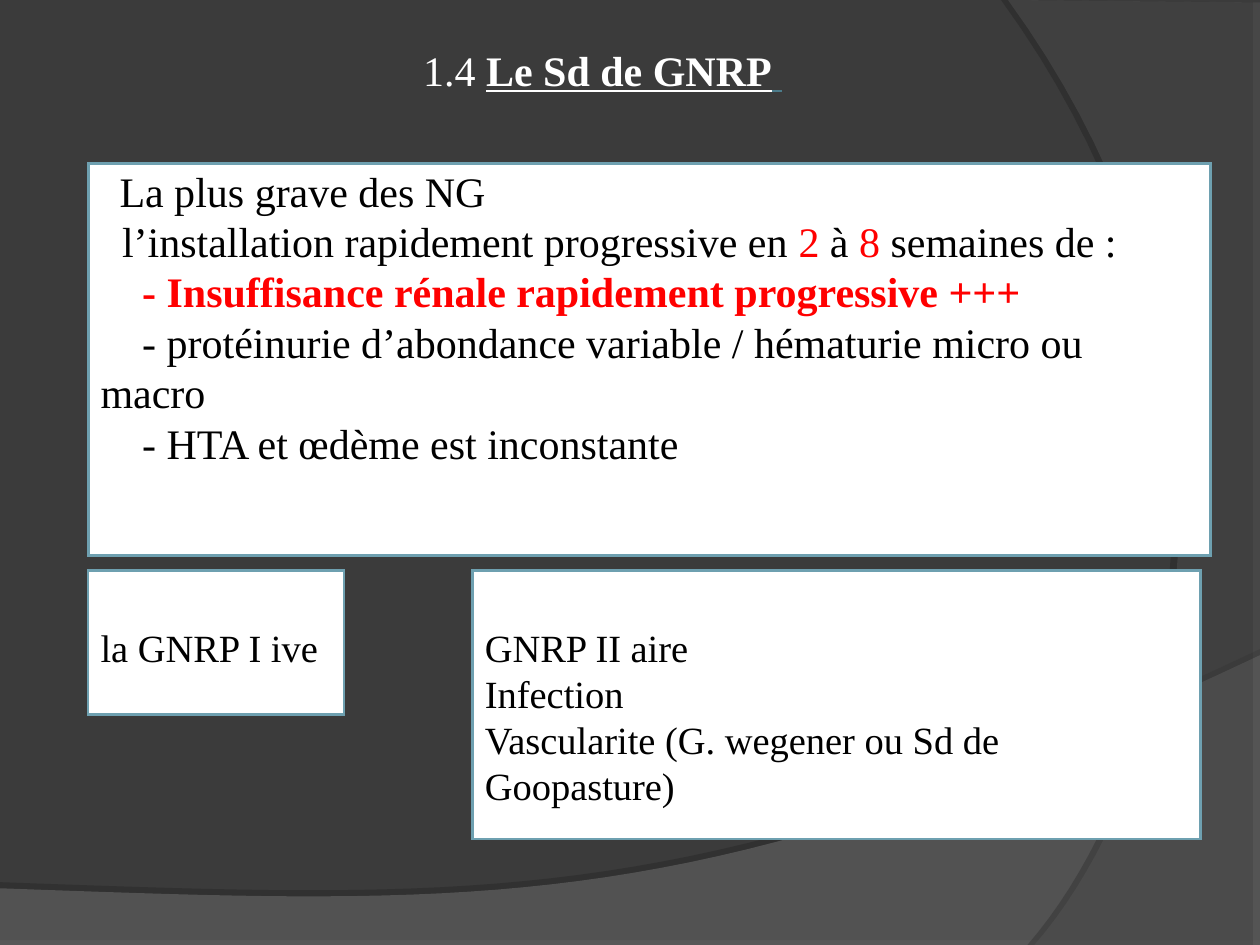
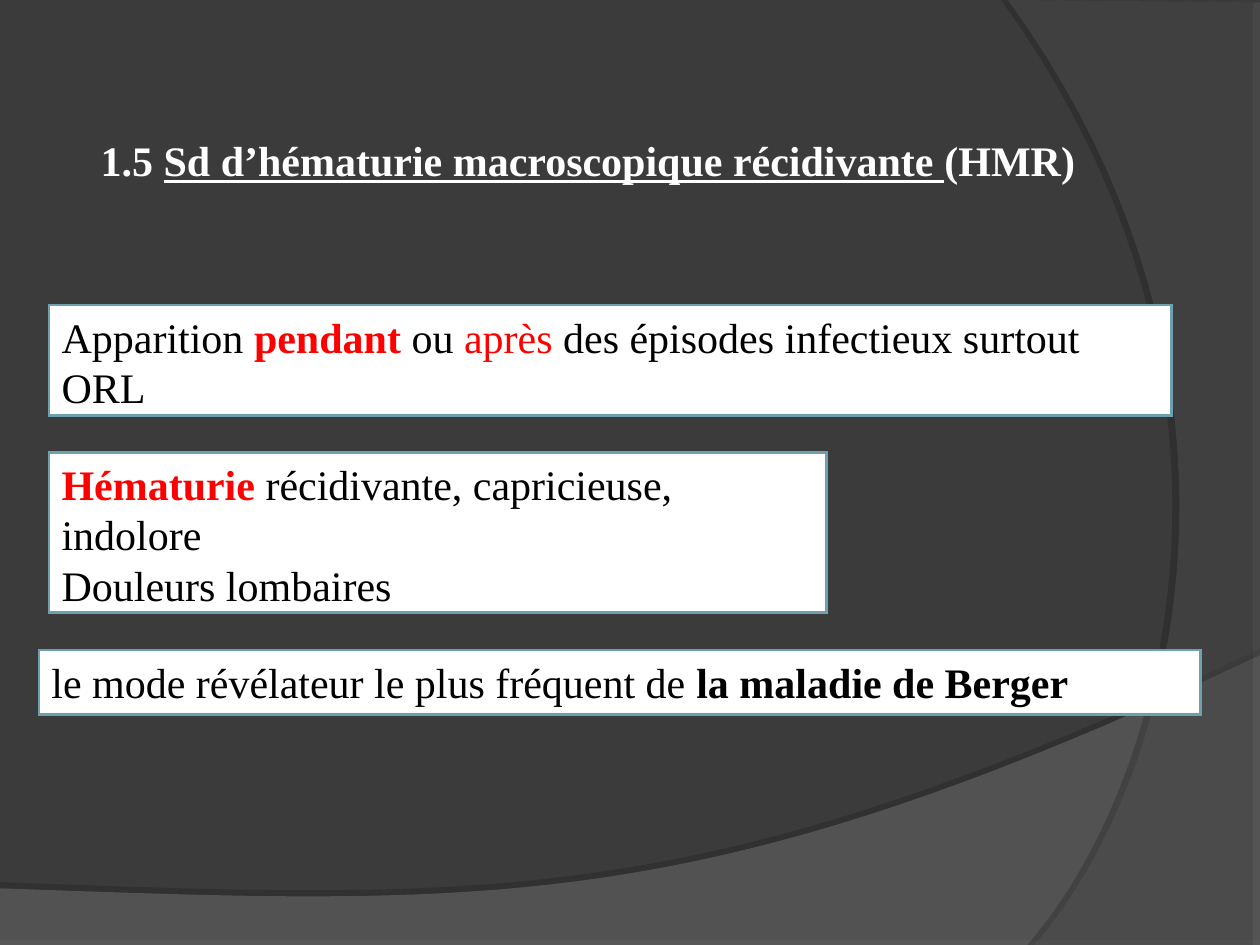
from lxml import etree
from pptx import Presentation
from pptx.dml.color import RGBColor
from pptx.enum import shapes, text
from pptx.oxml import ns
from pptx.util import Inches, Pt

WHITE = RGBColor(0xFF, 0xFF, 0xFF)
BLACK = RGBColor(0, 0, 0)
RED = RGBColor(0xFF, 0, 0)
TEAL = RGBColor(0x4C, 0x7C, 0x8B)
EDGE = RGBColor(0x6E, 0xA0, 0xB0)
DARK = RGBColor(0x3B, 0x3B, 0x3B)
GREY = RGBColor(0x7C, 0x7C, 0x7C)
SLATE = RGBColor(0x59, 0x59, 0x59)
FONT = "Times New Roman"
STEPS = 40


def child(node, tag, **attrs):
    return etree.SubElement(node, ns.qn(tag), {k: str(v) for k, v in attrs.items()})


def curve(a, b, c, d):
    points = []
    for i in range(STEPS + 1):
        t = i / STEPS
        s = 1 - t
        points.append(tuple(
            s**3 * p + 3 * s * s * t * q + 3 * s * t * t * r + t**3 * z
            for p, q, r, z in zip(a, b, c, d)))
    return points


def add_band(slide, points, color, alpha, shade, dist, angle):
    spots = [(Inches(x), Inches(y)) for x, y in points]
    pen = slide.shapes.build_freeform(*spots[0])
    pen.add_line_segments(spots[1:], close=True)
    band = pen.convert_to_shape()
    band.fill.solid()
    band.fill.fore_color.rgb = color
    band.line.fill.background()
    tint = band.element.spPr.find(".//" + ns.qn("a:srgbClr"))
    child(tint, "a:alpha", val=alpha * 1000)
    band.shadow.inherit = False
    effects = band.element.spPr.find(ns.qn("a:effectLst"))
    shadow = child(effects, "a:outerShdw", blurRad=0, dist=Pt(dist),
                   dir=angle * 60000, algn="ctr", rotWithShape=0)
    black = child(shadow, "a:srgbClr", val="000000")
    child(black, "a:alpha", val=shade * 1000)


def add_page(deck):
    slide = deck.slides.add_slide(deck.slide_layouts[6])
    low = curve((10, 5.2), (5.59, 7.29), (3.91, 7.19), (0, 7.05))
    side = curve((8.21, 7.5), (9.35, 6.19), (10.18, 3), (8, 0))
    add_band(slide, [(0, 7.51), (10, 7.51)] + low, GREY, 45, 35, 3.5, 270)
    add_band(slide, [(10, 0.02), (10, 7.5)] + side, SLATE, 40, 45, 4, 180)
    return slide


def write(shape, lines, size, color, top):
    frame = shape.text_frame
    frame.word_wrap = True
    frame.vertical_anchor = text.MSO_ANCHOR.TOP
    frame.margin_top = Inches(top)
    for i, (indent, runs) in enumerate(lines):
        para = frame.add_paragraph() if i else frame.paragraphs[0]
        para.alignment = text.PP_ALIGN.LEFT
        para._p.get_or_add_pPr().set("indent", str(Inches(indent)))
        for words, style in runs:
            run = para.add_run()
            run.text = words
            font = run.font
            font.name = FONT
            font.size = Pt(size)
            font.color.rgb = style.get("color", color)
            font.bold = style.get("bold", False)
            font.underline = style.get("line", False)


def add_title(slide, box, runs):
    title = slide.shapes.add_textbox(*map(Inches, box))
    write(title, [(0, runs)], 24, WHITE, 0.05)


def add_card(slide, box, lines, size=24, top=0.05):
    card = slide.shapes.add_shape(shapes.MSO_SHAPE.RECTANGLE, *map(Inches, box))
    card.shadow.inherit = False
    card.fill.solid()
    card.fill.fore_color.rgb = WHITE
    card.line.color.rgb = EDGE
    card.line.width = Pt(1.5)
    child(card.element.spPr.find(ns.qn("a:ln")), "a:miter", lim=800000)
    write(card, lines, size, BLACK, top)


def plain(words, indent=0):
    return indent, [(words, {})]


def add_rapid(deck):
    slide = add_page(deck)
    red = {"color": RED}
    add_card(slide, (0.7, 1.3, 8.91, 3.11), [
        plain("La plus grave des NG", 0.15),
        (0.17, [("l’installation rapidement progressive en ", {}), ("2", red),
                (" à ", {}), ("8", red), (" semaines de :", {})]),
        (0.33, [("- Insuffisance rénale rapidement progressive +++",
                 {"color": RED, "bold": True})]),
        plain("- protéinurie d’abondance variable / hématurie micro ou macro", 0.33),
        plain("- HTA et œdème est inconstante", 0.33),
    ], top=0.01)
    add_card(slide, (0.7, 4.53, 2.03, 1.14), [plain("la GNRP I ive")], 22, 0.42)
    add_card(slide, (3.75, 4.53, 5.78, 2.13), [
        plain("GNRP II aire"),
        plain("Infection"),
        plain("Vascularite (G. wegener ou Sd de Goopasture)"),
    ], 22, 0.42)
    add_title(slide, (3.26, 0.3, 3.17, 0.51), [
        ("1.4 ", {}),
        ("Le Sd de GNRP", {"bold": True, "line": True}),
        (" ", {"bold": True, "line": True, "color": TEAL}),
    ])


def add_relapse(deck):
    slide = add_page(deck)
    bold = {"bold": True}
    alert = {"bold": True, "color": RED}
    add_title(slide, (0.7, 1.02, 8.05, 0.88), [
        ("1.5 ", bold),
        ("Sd d’hématurie macroscopique récidivante ", {"bold": True, "line": True}),
        ("(HMR)", bold),
    ])
    add_card(slide, (0.39, 3.59, 6.17, 1.27), [
        (0, [("Hématurie", alert), (" récidivante, capricieuse, indolore", {})]),
        plain("Douleurs lombaires"),
    ])
    add_card(slide, (0.39, 2.42, 8.91, 0.88), [
        (0, [("Apparition ", {}), ("pendant", alert), (" ou ", {}),
             ("après", {"color": RED}),
             (" des épisodes infectieux surtout ORL", {})]),
    ])
    add_card(slide, (0.31, 5.16, 9.22, 0.51), [
        (0, [("le mode révélateur le plus fréquent de ", {}),
             ("la maladie de Berger", bold)]),
    ])


def main():
    deck = Presentation()
    deck.slide_width = Inches(10)
    deck.slide_height = Inches(7.5)
    back = deck.slide_master.background.fill
    back.solid()
    back.fore_color.rgb = DARK
    add_rapid(deck)
    add_relapse(deck)
    deck.save("out.pptx")


if __name__ == "__main__":
    main()
